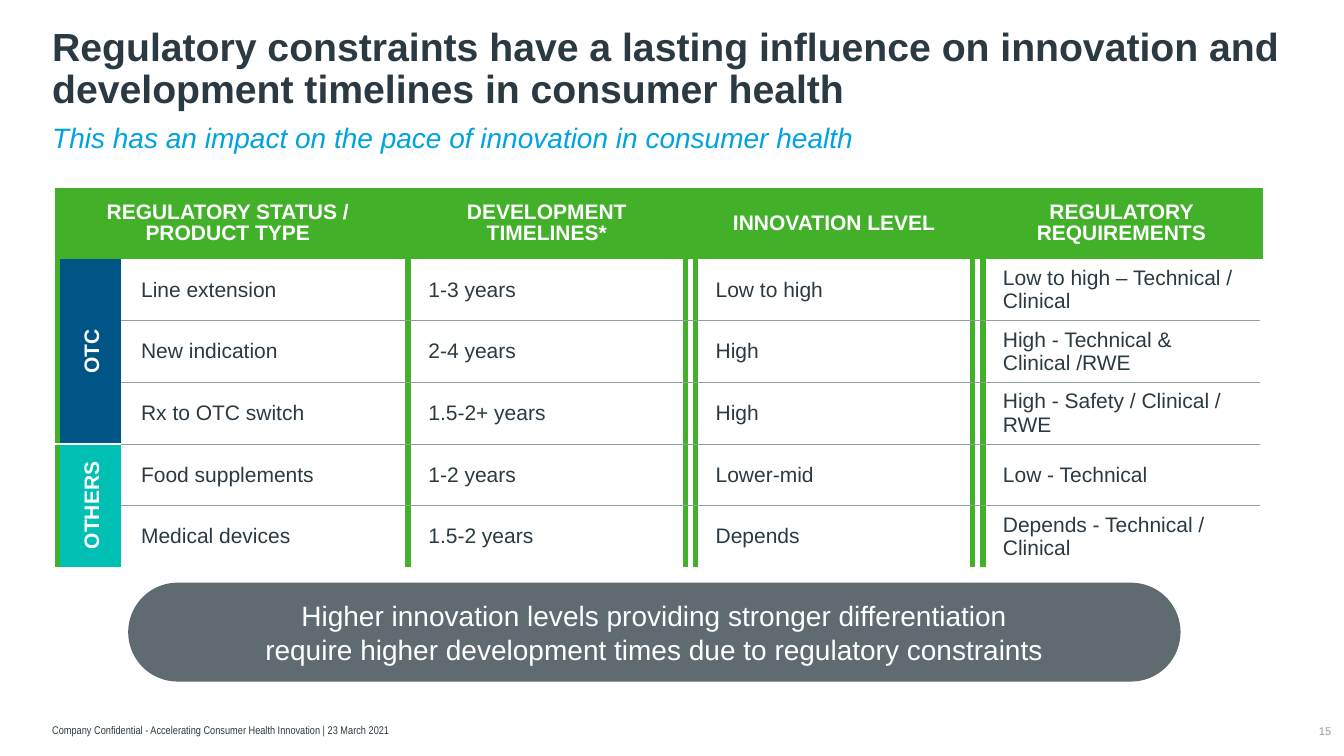
from lxml import etree
from pptx import Presentation
from pptx.dml.color import RGBColor
from pptx.enum.shapes import MSO_SHAPE
from pptx.enum.text import MSO_ANCHOR, PP_ALIGN
from pptx.oxml.ns import qn
from pptx.util import Pt

LEFT, CENTER, RIGHT = PP_ALIGN.LEFT, PP_ALIGN.CENTER, PP_ALIGN.RIGHT
TOP, MIDDLE, BOTTOM = MSO_ANCHOR.TOP, MSO_ANCHOR.MIDDLE, MSO_ANCHOR.BOTTOM
PILL = MSO_SHAPE.ROUNDED_RECTANGLE

WHITE = RGBColor(0xFF, 0xFF, 0xFF)
DARK = RGBColor(0x2B, 0x3A, 0x42)
SKY = RGBColor(0x00, 0xA3, 0xE0)
GREEN = RGBColor(0x43, 0xB0, 0x2A)
NAVY = RGBColor(0x00, 0x55, 0x87)
TEAL = RGBColor(0x00, 0xBF, 0xB3)
SLATE = RGBColor(0x60, 0x6B, 0x71)
GREY = RGBColor(0x95, 0x9C, 0xA0)

NO_STYLE = "{2D5ABB26-0587-4C30-8999-92F81FD0307C}"
GREEN_BAR, GREY_RULE, WHITE_RULE = (GREEN, 4.5), (GREY, 0.75), (WHITE, 1)

HEADERS = ["REGULATORY STATUS /\vPRODUCT TYPE", "DEVELOPMENT TIMELINES*",
           "INNOVATION LEVEL", "REGULATORY REQUIREMENTS"]
PRODUCTS = [
    ["Line extension", "1-3 years", "Low to high", "Low to high – Technical / Clinical"],
    ["New indication", "2-4 years", "High", "High - Technical & Clinical /RWE"],
    ["Rx to OTC switch", "1.5-2+ years", "High", "High - Safety / Clinical / RWE"],
    ["Food supplements", "1-2 years", "Lower-mid", "Low - Technical"],
    ["Medical devices", "1.5-2 years", "Depends", "Depends - Technical / Clinical"],
]
# label, first row, last row, colour, top of the label box
GROUPS = [("OTC", 1, 3, NAVY, 238.3), ("OTHERS", 4, 5, TEAL, 348.5)]


def write(frame, text, size, color, align=LEFT, anchor=TOP, bold=False,
          italic=False, font="Arial", spacing=1.0):
    frame.word_wrap = True
    frame.vertical_anchor = anchor
    frame.text = text
    para = frame.paragraphs[0]
    para.alignment = align
    para.line_spacing = spacing
    para.font.name = font
    para.font.size = Pt(size)
    para.font.bold = bold
    para.font.italic = italic
    para.font.color.rgb = color


def draw_borders(cell, borders):
    """Add cell borders, keyed L, R, T, B; call before the fill is set."""
    properties = cell._tc.get_or_add_tcPr()
    for side in "LRTB":
        if side in borders:
            color, width = borders[side]
            line = etree.SubElement(properties, qn(f"a:ln{side}"), w=str(Pt(width)))
            fill = etree.SubElement(line, qn("a:solidFill"))
            etree.SubElement(fill, qn("a:srgbClr"), val=str(color))


deck = Presentation()
deck.slide_width, deck.slide_height = Pt(960), Pt(540)
slide = deck.slides.add_slide(deck.slide_layouts[6])
shapes = slide.shapes

# Title, subtitle and footer
box = shapes.add_textbox(Pt(30.2), Pt(23), Pt(893), Pt(60.5))
write(box.text_frame, "Regulatory constraints have a lasting influence on innovation and "
      "development timelines in consumer health", 28, DARK, anchor=BOTTOM, bold=True, spacing=0.9)
box = shapes.add_textbox(Pt(30.2), Pt(85), Pt(893), Pt(31.7))
write(box.text_frame, "This has an impact on the pace of innovation in consumer health",
      20, SKY, italic=True, spacing=0.9)
box = shapes.add_textbox(Pt(30.2), Pt(503.3), Pt(730.8), Pt(26.6))
write(box.text_frame, "Company Confidential - Accelerating Consumer Health Innovation | 23 March 2021",
      8, DARK, anchor=BOTTOM, font="Arial Narrow")
box = shapes.add_textbox(Pt(923), Pt(515.5), Pt(28), Pt(13.7))
frame = box.text_frame
frame.margin_left = frame.margin_right = frame.margin_top = frame.margin_bottom = 0
write(frame, "15", 8, GREY, align=RIGHT, anchor=MIDDLE)

# Table: a group column, then text columns parted by narrow gaps
widths = [45.4, 198] + [7.2, 198] * 3
heights = [50.4] + [44.06] * 5
table_frame = shapes.add_table(len(heights), len(widths), Pt(41), Pt(134.6),
                               Pt(sum(widths)), Pt(sum(heights)))
table = table_frame.table
table.first_row = table.horz_banding = False
table._tbl.tblPr.find(qn("a:tableStyleId")).text = NO_STYLE
for column, width in zip(table.columns, widths):
    column.width = Pt(width)
for row, height in zip(table.rows, heights):
    row.height = Pt(height)

group_colors = {row: color for _, first, last, color, _ in GROUPS
                for row in range(first, last + 1)}
last_row = len(heights) - 1
for row in range(len(heights)):
    for column in range(len(widths)):
        cell = table.cell(row, column)
        is_gap = column > 0 and column % 2 == 0
        borders = {}
        if is_gap:
            borders["R"] = GREEN_BAR
            cell.margin_left = cell.margin_right = 0
        elif column != 1:
            borders["L"] = GREEN_BAR
        if column == 0:
            if row == GROUPS[0][2]:
                borders["B"] = WHITE_RULE
            elif row == GROUPS[1][1]:
                borders["T"] = WHITE_RULE
        elif row > 0:
            if row > 1:
                borders["T"] = GREY_RULE
            if row < last_row:
                borders["B"] = GREY_RULE
        draw_borders(cell, borders)

        if row == 0 or column == 0:
            cell.fill.solid()
            cell.fill.fore_color.rgb = GREEN if row == 0 else group_colors[row]
        else:
            cell.fill.background()
        if row > 0 and column % 2 == 1:
            cell.margin_left = cell.margin_right = Pt(14.4)
            write(cell.text_frame, PRODUCTS[row - 1][column // 2], 15, DARK)
            cell.vertical_anchor = MIDDLE

table.cell(0, 0).merge(table.cell(0, 1))
for column, header in zip([0, 3, 5, 7], HEADERS):
    cell = table.cell(0, column)
    write(cell.text_frame, header, 15, WHITE, align=CENTER, bold=True, spacing=0.9)
    cell.vertical_anchor = MIDDLE

for label, first, last, _, top in GROUPS:
    table.cell(first, 0).merge(table.cell(last, 0))
    box = shapes.add_textbox(Pt(23.8), Pt(top), Pt(82), Pt(25.2))
    box.rotation = 270
    write(box.text_frame, label, 15, WHITE, align=CENTER, bold=True)

# Takeaway
pill = shapes.add_shape(PILL, Pt(91.6), Pt(416.2), Pt(751.7), Pt(70.6))
pill.adjustments[0] = 0.5
pill.shadow.inherit = False
pill.fill.solid()
pill.fill.fore_color.rgb = SLATE
pill.line.fill.background()
write(pill.text_frame, "Higher innovation levels providing stronger differentiation\v"
      "require higher development times due to regulatory constraints",
      20, WHITE, align=CENTER, anchor=MIDDLE)

deck.save("out.pptx")
